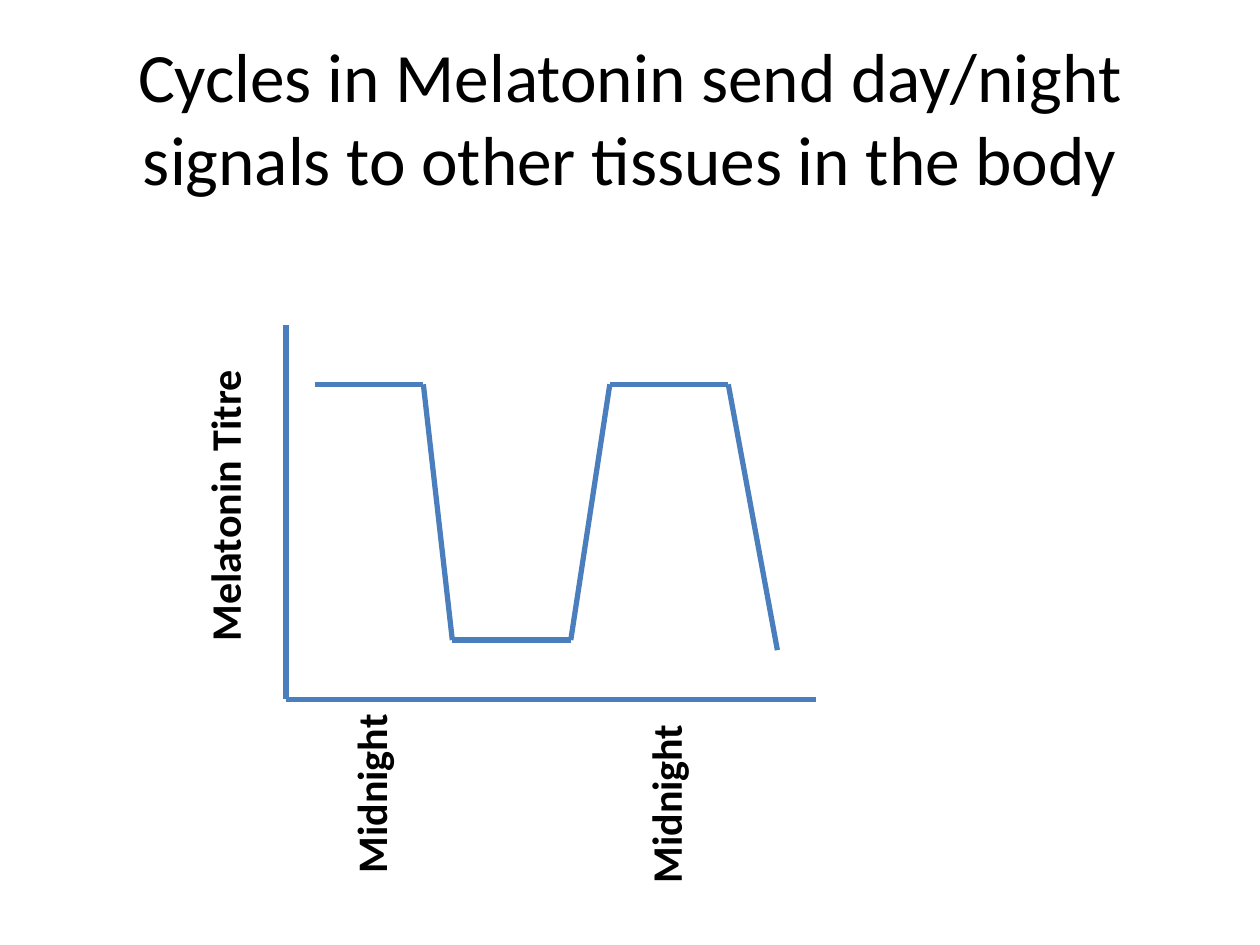
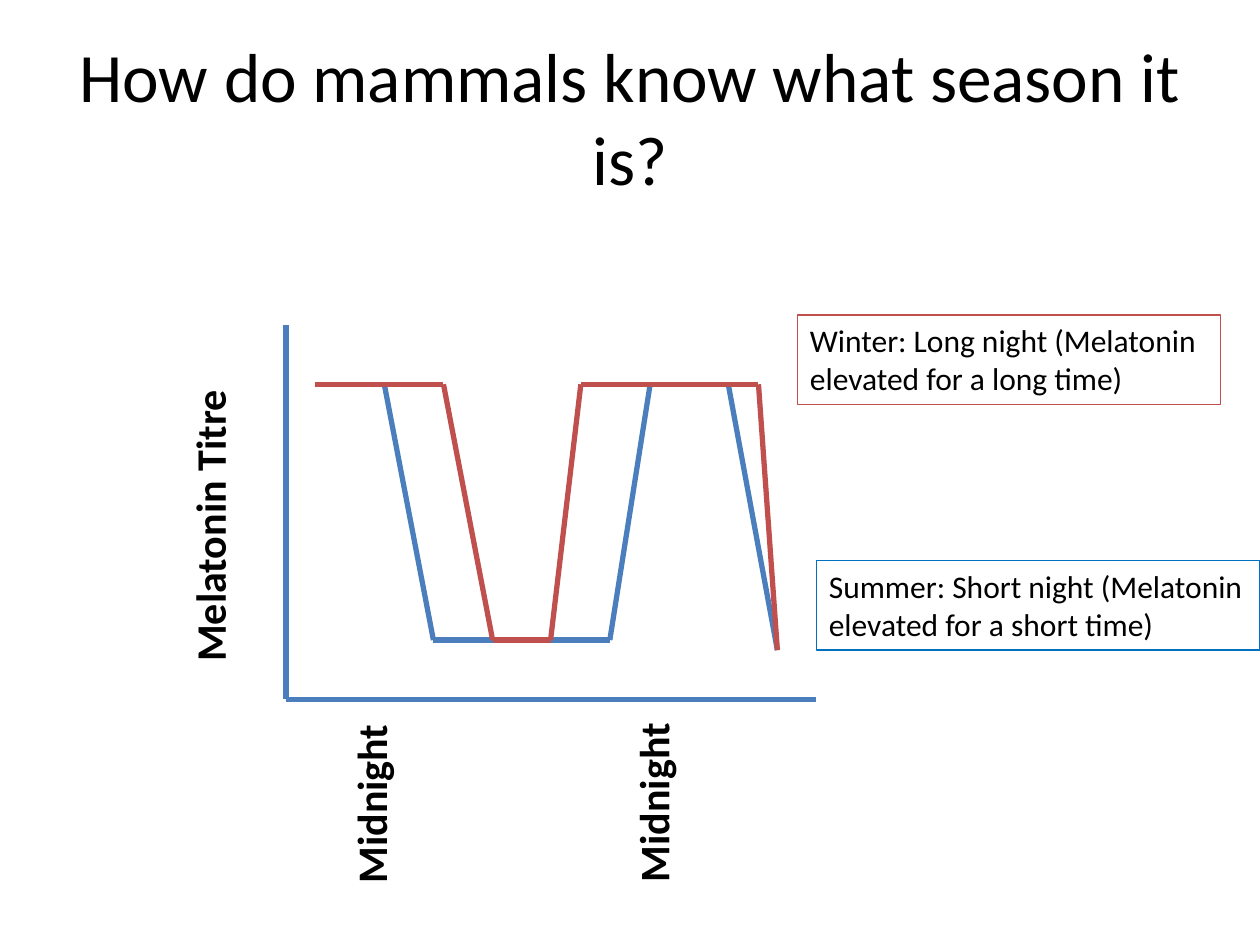
import dataclasses
import itertools

import pptx
import pptx.dml.color
import pptx.enum.shapes
import pptx.enum.text
import pptx.oxml
import pptx.util

Inches = pptx.util.Inches
Pt = pptx.util.Pt
Align = pptx.enum.text.PP_ALIGN
Anchor = pptx.enum.text.MSO_ANCHOR


@dataclasses.dataclass(frozen=True)
class Theme:
    font: str = "Calibri"
    text: str = "000000"
    blue: str = "4B7EBC"
    red: str = "C0504D"
    summer_border: str = "0070C0"
    title_size: float = 39.6
    label_size: float = 24
    note_size: float = 18
    curve_width: float = 3
    border_width: float = 0.75


THEME = Theme()

# Levels of the hormone curve, in inches from the top
HIGH, LOW, END = 3.05, 5.08, 5.16
CURVE_START, CURVE_END = 2.5, 6.17
LABEL_HEIGHT = 0.5


def color(value):
    return pptx.dml.color.RGBColor.from_string(value)


def write(box, text, size, bold=False, align=Align.LEFT, anchor=Anchor.TOP, wrap=True):
    frame = box.text_frame
    frame.word_wrap = wrap
    frame.vertical_anchor = anchor
    para = frame.paragraphs[0]
    para.alignment = align
    span = para.add_run()
    span.text = text
    span.font.name = THEME.font
    span.font.size = Pt(size)
    span.font.bold = bold
    span.font.color.rgb = color(THEME.text)


def add_page(deck, title):
    page = deck.slides.add_slide(deck.slide_layouts[5])
    box = page.shapes.title
    box.left, box.top, box.width, box.height = map(Inches, (0.5, 0.3, 9, 1.25))
    write(box, title, THEME.title_size, align=Align.CENTER, anchor=Anchor.MIDDLE)
    return page


def add_path_lines(page, points, line_color):
    """Join neighbouring points with straight lines."""
    for start, end in itertools.pairwise(points):
        line = page.shapes.add_connector(
            pptx.enum.shapes.MSO_CONNECTOR.STRAIGHT, *map(Inches, start + end))
        line.line.color.rgb = color(line_color)
        line.line.width = Pt(THEME.curve_width)
        properties = line._element.spPr
        properties.append(pptx.oxml.parse_xml(
            '<a:effectLst xmlns:a="http://schemas.openxmlformats.org/drawingml/2006/main"/>'))


def add_axes(page):
    add_path_lines(page, [(2.27, 2.58), (2.27, 5.55), (6.48, 5.55)], THEME.blue)


def add_curve(page, dusk_fall, day_start, day_end, night_start, night_end, line_color):
    """Draw night, day and night again, then the next fall."""
    points = [(CURVE_START, HIGH), (dusk_fall, HIGH), (day_start, LOW), (day_end, LOW),
              (night_start, HIGH), (night_end, HIGH), (CURVE_END, END)]
    add_path_lines(page, points, line_color)


def add_vertical_label(page, text, left, top, length):
    box = page.shapes.add_textbox(*map(Inches, (left, top, length, LABEL_HEIGHT)))
    box.rotation = 270
    write(box, text, THEME.label_size, bold=True, wrap=False)


def add_labels(page, titre_place, midnight_places):
    add_vertical_label(page, "Melatonin Titre", *titre_place, 2.38)
    for place in midnight_places:
        add_vertical_label(page, "Midnight", *place, 1.48)


def add_note(page, text, left, top, width, border):
    box = page.shapes.add_shape(pptx.enum.shapes.MSO_SHAPE.RECTANGLE,
                                *map(Inches, (left, top, width, 0.71)))
    box.shadow.inherit = False
    box.fill.background()
    box.line.color.rgb = color(border)
    box.line.width = Pt(THEME.border_width)
    write(box, text, THEME.note_size)


def build_daily_cycle(deck):
    page = add_page(deck, "Cycles in Melatonin send day/night signals "
                          "to other tissues in the body")
    add_axes(page)
    add_labels(page, (0.59, 3.75), [(2.2, 6.04), (4.54, 6.12)])
    add_curve(page, 3.36, 3.59, 4.53, 4.84, 5.78, THEME.blue)


def build_seasons(deck):
    page = add_page(deck, "How do mammals know what season it is?")
    add_axes(page)
    add_labels(page, (0.47, 3.91), [(2.2, 6.12), (4.44, 6.11)])
    # Summer first, so that the winter curve lies on top
    add_curve(page, 3.05, 3.44, 4.84, 5.16, 5.78, THEME.blue)
    add_curve(page, 3.52, 3.91, 4.37, 4.61, 6.02, THEME.red)
    add_note(page, "Winter: Long night (Melatonin elevated for a long time)",
             6.33, 2.5, 3.36, THEME.red)
    add_note(page, "Summer: Short night (Melatonin elevated for a short time)",
             6.48, 4.45, 3.52, THEME.summer_border)


def main():
    deck = pptx.Presentation()
    deck.slide_width, deck.slide_height = Inches(10), Inches(7.5)
    build_daily_cycle(deck)
    build_seasons(deck)
    deck.save("out.pptx")


if __name__ == "__main__":
    main()
